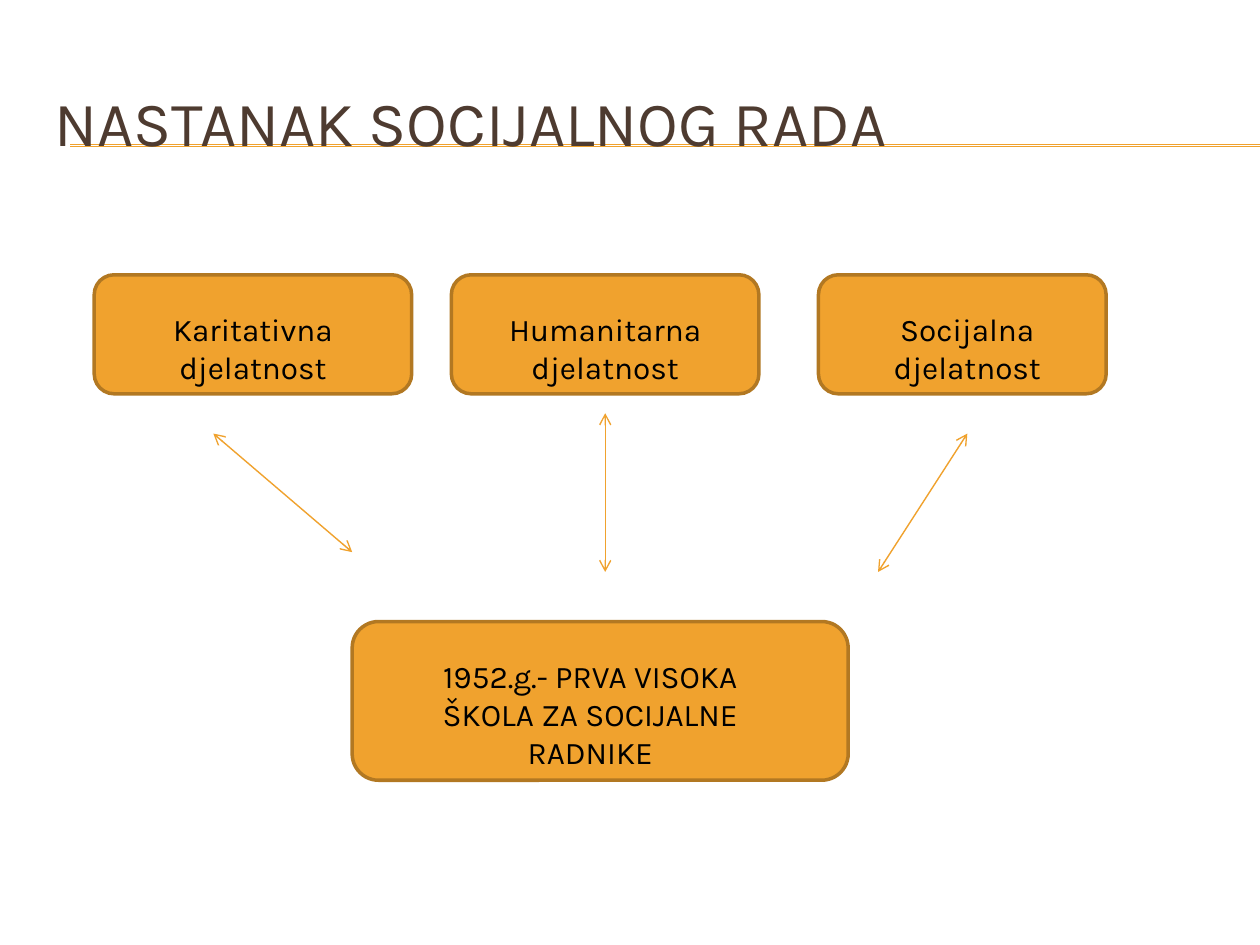
from pptx import Presentation
from pptx.dml.color import RGBColor
from pptx.enum.shapes import MSO_CONNECTOR, MSO_SHAPE
from pptx.enum.text import MSO_ANCHOR, PP_ALIGN
from pptx.oxml.ns import qn
from pptx.util import Cm, Pt
from lxml import etree

ROUNDED = MSO_SHAPE.ROUNDED_RECTANGLE
STRAIGHT = MSO_CONNECTOR.STRAIGHT
TOP, MIDDLE = MSO_ANCHOR.TOP, MSO_ANCHOR.MIDDLE
LEFT, CENTER = PP_ALIGN.LEFT, PP_ALIGN.CENTER

COLORS = {"amber": "F0A22E", "border": "B27822", "title": "4E3B30", "text": "000000"}


class SlideBuilder:
    font = "Karla"

    def __init__(self, slide):
        self.slide = slide

    def color(self, name):
        return RGBColor.from_string(COLORS[name])

    def text(self, wording, left, top, width, height, size=18,
             color="text", align=CENTER, anchor=TOP):
        box = self.slide.shapes.add_textbox(Cm(left), Cm(top), Cm(width), Cm(height))
        frame = box.text_frame
        frame.word_wrap = True
        frame.vertical_anchor = anchor
        paragraph = frame.paragraphs[0]
        paragraph.text = wording
        paragraph.alignment = align
        paragraph.font.name = self.font
        paragraph.font.size = Pt(size)
        paragraph.font.color.rgb = self.color(color)

    def card(self, left, top, width, height):
        card = self.slide.shapes.add_shape(ROUNDED, Cm(left), Cm(top), Cm(width), Cm(height))
        card.shadow.inherit = False
        card.fill.solid()
        card.fill.fore_color.rgb = self.color("amber")
        card.line.color.rgb = self.color("border")
        card.line.width = Pt(2)

    def line(self, x1, y1, x2, y2, weight=0.75, arrows=False):
        line = self.slide.shapes.add_connector(STRAIGHT, Cm(x1), Cm(y1), Cm(x2), Cm(y2))
        line.line.color.rgb = self.color("amber")
        line.line.width = Pt(weight)
        if arrows:
            outline = line.line._get_or_add_ln()
            for end in ("a:headEnd", "a:tailEnd"):
                etree.SubElement(outline, qn(end), type="arrow")
        etree.SubElement(line._element.spPr, qn("a:effectLst"))


def main():
    prs = Presentation()
    prs.slide_width, prs.slide_height = Cm(25.4), Cm(19.05)
    builder = SlideBuilder(prs.slides.add_slide(prs.slide_layouts[6]))

    # Double rule and title
    for rule_y in (2.92, 2.95):
        builder.line(1.42, rule_y, 25.4, rule_y)
    builder.text("NASTANAK SOCIJALNOG RADA", 0.84, 1.27, 24.13, 2.34,
                 size=36, color="title", align=LEFT, anchor=MIDDLE)

    # Three kinds of activity: card left and width, label left and width
    activities = [
        ("Karitativna djelatnost", 1.9, 6.4, 2.3, 5.6),
        ("Humanitarna djelatnost", 9.1, 6.2, 9.7, 5),
        ("Socijalna djelatnost", 16.5, 5.8, 17.1, 4.8),
    ]
    for wording, card_left, card_width, label_left, label_width in activities:
        builder.card(card_left, 5.54, card_width, 2.4)
        builder.text(wording, label_left, 6.13, label_width, 1.8)

    # Two-way arrows between the activities and the school
    for ends in [(4.3, 8.74, 7.1, 11.13), (12.2, 8.33, 12.2, 11.53), (19.5, 8.74, 17.7, 11.53)]:
        builder.line(*ends, weight=0.79, arrows=True)

    # First school
    builder.card(7.1, 12.53, 10, 3.2)
    builder.text("1952.g.- PRVA VISOKA ŠKOLA ZA SOCIJALNE RADNIKE", 7.9, 13.13, 8, 2.57)

    prs.save("out.pptx")


if __name__ == "__main__":
    main()
